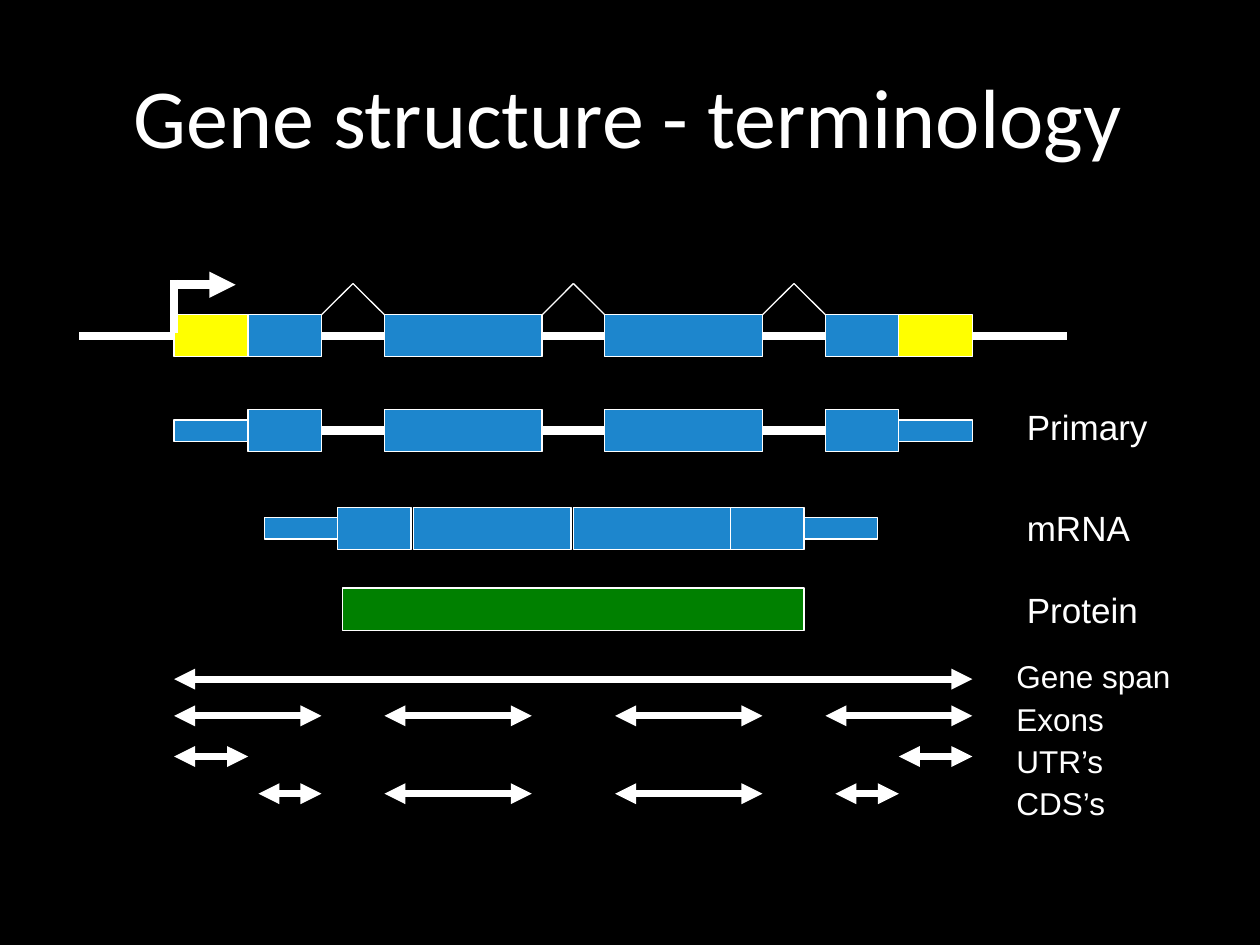
"""Builds a slide that explains the terms used for the parts of a gene."""
import pptx
import pptx.dml.color
import pptx.enum.shapes
import pptx.enum.text
import pptx.oxml
import pptx.oxml.ns
import pptx.util
from pptx.util import Cm

WHITE, BLUE, YELLOW, GREEN, BLACK = "FFFFFF", "1D86CD", "FFFF00", "008000", "000000"
BOX_HEIGHT, UTR_HEIGHT = 0.85, 0.43
END_WIDTH, EXON_WIDTH = 1.48, 3.18


def color(hex_code):
    return pptx.dml.color.RGBColor.from_string(hex_code)


def drawing_element(tag, **attributes):
    element = pptx.oxml.parse_xml(f"<a:{tag} {pptx.oxml.ns.nsdecls('a')}/>")
    for key, value in attributes.items():
        element.set(key, value)
    return element


class GeneSlide:
    def __init__(self, presentation):
        self.ink = WHITE
        self.slide = presentation.slides.add_slide(presentation.slide_layouts[5])
        background = self.slide.background.fill
        background.solid()
        background.fore_color.rgb = color(BLACK)

    def style_text(self, paragraph, size, font):
        paragraph.font.size = pptx.util.Pt(size)
        paragraph.font.name = font
        paragraph.font.color.rgb = color(self.ink)

    def title(self, text, left, top, width, height):
        title = self.slide.shapes.title
        title.left, title.top, title.width, title.height = map(Cm, (left, top, width, height))
        title.text_frame.text = text
        title.text_frame.vertical_anchor = pptx.enum.text.MSO_ANCHOR.MIDDLE
        heading = title.text_frame.paragraphs[0]
        heading.alignment = pptx.enum.text.PP_ALIGN.CENTER
        self.style_text(heading, 48, "Calibri")

    def label(self, lines, left, top, width, height, size, gap=0):
        box = self.slide.shapes.add_textbox(Cm(left), Cm(top), Cm(width), Cm(height))
        frame = box.text_frame
        frame.word_wrap = True
        frame.text = "\n".join(lines)
        for index, paragraph in enumerate(frame.paragraphs):
            if index:
                paragraph.space_before = pptx.util.Pt(gap)
            self.style_text(paragraph, size, "Arial")

    def box(self, left, middle, width, fill, height=BOX_HEIGHT):
        box = self.slide.shapes.add_shape(
            pptx.enum.shapes.MSO_SHAPE.RECTANGLE,
            Cm(left), Cm(middle - height / 2), Cm(width), Cm(height))
        box.shadow.inherit = False
        box.fill.solid()
        box.fill.fore_color.rgb = color(fill)
        box.line.color.rgb = color(self.ink)
        box.line.width = pptx.util.Pt(0.75)

    def line(self, x1, y1, x2, y2, weight, heads=()):
        line = self.slide.shapes.add_connector(
            pptx.enum.shapes.MSO_CONNECTOR.STRAIGHT, Cm(x1), Cm(y1), Cm(x2), Cm(y2))
        line.line.color.rgb = color(self.ink)
        line.line.width = pptx.util.Pt(weight)
        outline = line.line._get_or_add_ln()
        for head in heads:
            outline.append(drawing_element(head, type="triangle"))
        line._element.spPr.append(drawing_element("effectLst"))

    def span(self, start, end, y):
        self.line(start, y, end, y, 4, ("headEnd", "tailEnd"))


def main():
    presentation = pptx.Presentation()
    presentation.slide_width, presentation.slide_height = Cm(25.4), Cm(19.05)
    page = GeneSlide(presentation)
    page.title("Gene structure - terminology", 0.99, 0.33, 23.34, 3.96)

    gene_y, primary_y, mrna_y, protein_y = 6.77, 8.68, 10.65, 12.28
    gene_start, gene_end = 3.51, 19.6
    coding = [(5, END_WIDTH), (7.75, EXON_WIDTH), (12.19, EXON_WIDTH), (16.64, END_WIDTH)]
    utrs = [gene_start, 18.12]

    page.line(5.64, primary_y, 19.18, primary_y, 4.75)
    page.line(1.6, gene_y, 21.51, gene_y, 4.75)
    for middle, utr_fill, utr_height in ((gene_y, YELLOW, BOX_HEIGHT),
                                         (primary_y, BLUE, UTR_HEIGHT)):
        for left, width in coding:
            page.box(left, middle, width, BLUE)
        for left in utrs:
            page.box(left, middle, END_WIDTH, utr_fill, utr_height)

    page.line(3.48, 5.74, 4.75, 5.74, 5, ("tailEnd",))
    page.line(gene_start, 5.64, gene_start, 6.71, 5)

    exon_top = gene_y - BOX_HEIGHT / 2
    for (left, width), (next_left, _) in zip(coding, coding[1:]):
        peak = (left + width + next_left) / 2
        for foot in (left + width, next_left):
            page.line(foot, exon_top, peak, exon_top - 0.63, 0.75)

    for left, width in ((6.81, END_WIDTH), (8.33, EXON_WIDTH),
                        (11.56, EXON_WIDTH), (14.73, END_WIDTH)):
        page.box(left, mrna_y, width, BLUE)
    for left in (5.33, 16.21):
        page.box(left, mrna_y, END_WIDTH, BLUE, UTR_HEIGHT)
    page.box(6.9, protein_y, 9.31, GREEN)

    page.label(["Primary"], 20.45, 8.05, 3.61, 1.12, 20)
    page.label(["mRNA", "Protein"], 20.45, 10.08, 3.61, 2.82, 20, gap=23)

    inner_exons = [(7.75, 10.72), (12.4, 15.37)]
    tracks = [
        ("Gene span", 13.69, [(gene_start, gene_end)]),
        ("Exons", 14.43, [(gene_start, 6.48), *inner_exons, (16.64, gene_end)]),
        ("UTR’s", 15.25, [(gene_start, 5), (18.12, gene_end)]),
        ("CDS’s", 16, [(5.21, 6.48), *inner_exons, (16.84, 18.12)]),
    ]
    for row, (term, y, spans) in enumerate(tracks):
        for start, end in spans:
            page.span(start, end, y)
        page.label([term], 20.24, 13.13 + 0.85 * row, 4.01, 1.02, 18)

    presentation.save("out.pptx")


if __name__ == "__main__":
    main()
